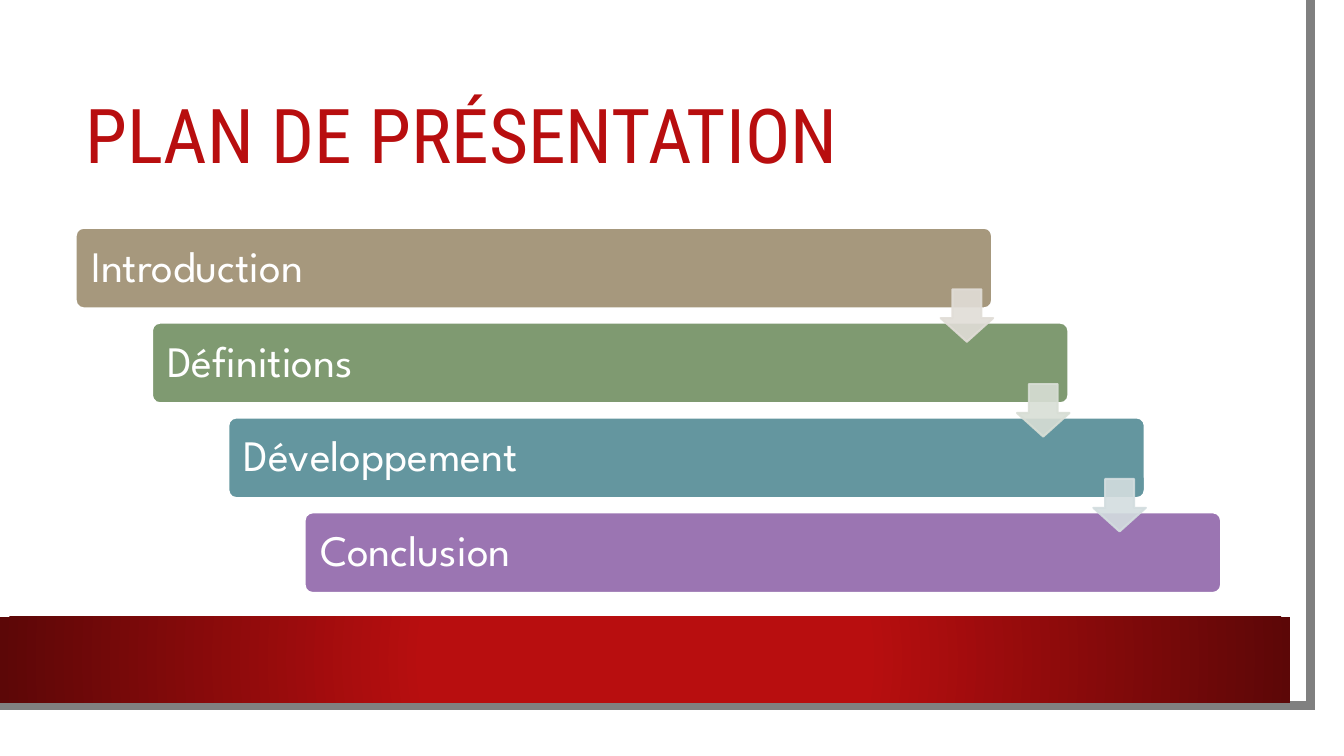
from pptx import Presentation
from pptx.dml.color import RGBColor
from pptx.enum.shapes import MSO_SHAPE
from pptx.enum.text import MSO_ANCHOR, PP_ALIGN
from pptx.oxml import parse_xml
from pptx.oxml.ns import nsdecls, qn
from pptx.util import Inches, Pt
from lxml import etree

RECTANGLE = MSO_SHAPE.RECTANGLE
ROUNDED = MSO_SHAPE.ROUNDED_RECTANGLE
DOWN_ARROW = MSO_SHAPE.DOWN_ARROW
MIDDLE = MSO_ANCHOR.MIDDLE
LEFT = PP_ALIGN.LEFT

TITLE = "PLAN DE PRÉSENTATION"
STEPS = [
    ("Introduction", "A6987D", "E1DDD7"),
    ("Définitions", "7F9A71", "D8DED5"),
    ("Développement", "64969F", "D3DDDF"),
    ("Conclusion", "9B75B2", None),
]
THEME = {
    "title_font": "Roboto Condensed", "title_size": 54,
    "step_font": "League Spartan", "step_size": 31,
    "red": "B80E0F", "dark_red": "5C0707",
    "edge": "808080", "white": "FFFFFF",
}
EDGE_POINTS = [(12.82, 0), (12.85, 7.02), (-0.03, 7.01)]
STEP_LEFT, STEP_TOP = 0.75, 2.26
STEP_WIDTH, STEP_HEIGHT = 9.09, 0.8
SHIFT_X, SHIFT_Y = 0.757, 0.941
ARROW_SIZE, ARROW_DX, ARROW_DY = 0.52, 8.58, 0.61


def color(name):
    return RGBColor.from_string(name)


def add_box(page, kind, left, top, width, height, fill, line=None):
    box = page.shapes.add_shape(kind, Inches(left), Inches(top), Inches(width), Inches(height))
    box.shadow.inherit = False
    box.fill.solid()
    box.fill.fore_color.rgb = color(fill)
    if line:
        box.line.color.rgb = color(line)
        box.line.width = Pt(1.5)
    else:
        box.line.fill.background()
    return box


def write(box, text, font, size, ink, inset):
    frame = box.text_frame
    frame.word_wrap = True
    frame.vertical_anchor = MIDDLE
    frame.margin_left = frame.margin_right = Inches(inset)
    para = frame.paragraphs[0]
    para.alignment = LEFT
    para.line_spacing = 0.9
    span = para.add_run()
    span.text = text
    span.font.name = font
    span.font.size = Pt(size)
    span.font.color.rgb = color(ink)


def add_edge(page):
    builder = page.shapes.build_freeform(*EDGE_POINTS[0], scale=Inches(1))
    builder.add_line_segments(EDGE_POINTS[1:], close=False)
    edge = builder.convert_to_shape()
    edge.shadow.inherit = False
    edge.fill.background()
    edge.line.color.rgb = color(THEME["edge"])
    edge.line.width = Pt(6.5)
    etree.SubElement(edge.line._get_or_add_ln(), qn("a:miter"), lim="800000")


def add_band(page):
    band = add_box(page, RECTANGLE, 0, 6.12, 12.8, 0.85, THEME["red"])
    solid = band._element.spPr.find(qn("a:solidFill"))
    gradient = parse_xml(
        f'<a:gradFill {nsdecls("a")} rotWithShape="1"><a:gsLst>'
        f'<a:gs pos="34000"><a:srgbClr val="{THEME["red"]}"/></a:gs>'
        f'<a:gs pos="100000"><a:srgbClr val="{THEME["dark_red"]}"/></a:gs></a:gsLst>'
        '<a:path path="circle"><a:fillToRect l="50000" t="50000" r="50000" b="50000"/></a:path>'
        '</a:gradFill>')
    solid.getparent().replace(solid, gradient)


def add_arrow(page, left, top, tint):
    arrow = add_box(page, DOWN_ARROW, left, top, ARROW_SIZE, ARROW_SIZE, tint, tint)
    arrow.adjustments[0] = 0.55
    arrow.adjustments[1] = 0.45
    for paint in arrow._element.spPr.iter(qn("a:srgbClr")):
        etree.SubElement(paint, qn("a:alpha"), val="90000")


def main():
    deck = Presentation()
    deck.slide_width, deck.slide_height = Inches(13.33), Inches(7.5)
    page = deck.slides.add_slide(deck.slide_layouts[6])
    add_edge(page)
    add_band(page)
    title = page.shapes.add_textbox(Inches(0.75), Inches(0.75), Inches(11.37), Inches(1.26))
    write(title, TITLE, THEME["title_font"], THEME["title_size"], THEME["red"], 0.1)

    places = [(STEP_LEFT + i * SHIFT_X, STEP_TOP + i * SHIFT_Y) for i in range(len(STEPS))]
    for (label, fill, _), (left, top) in zip(STEPS, places):
        step = add_box(page, ROUNDED, left, top, STEP_WIDTH, STEP_HEIGHT, fill, THEME["white"])
        step.adjustments[0] = 0.1
        write(step, label, THEME["step_font"], THEME["step_size"], THEME["white"], 0.13)
    for (_, _, tint), (left, top) in zip(STEPS, places):
        if tint:
            add_arrow(page, left + ARROW_DX, top + ARROW_DY, tint)
    deck.save("out.pptx")


if __name__ == "__main__":
    main()
